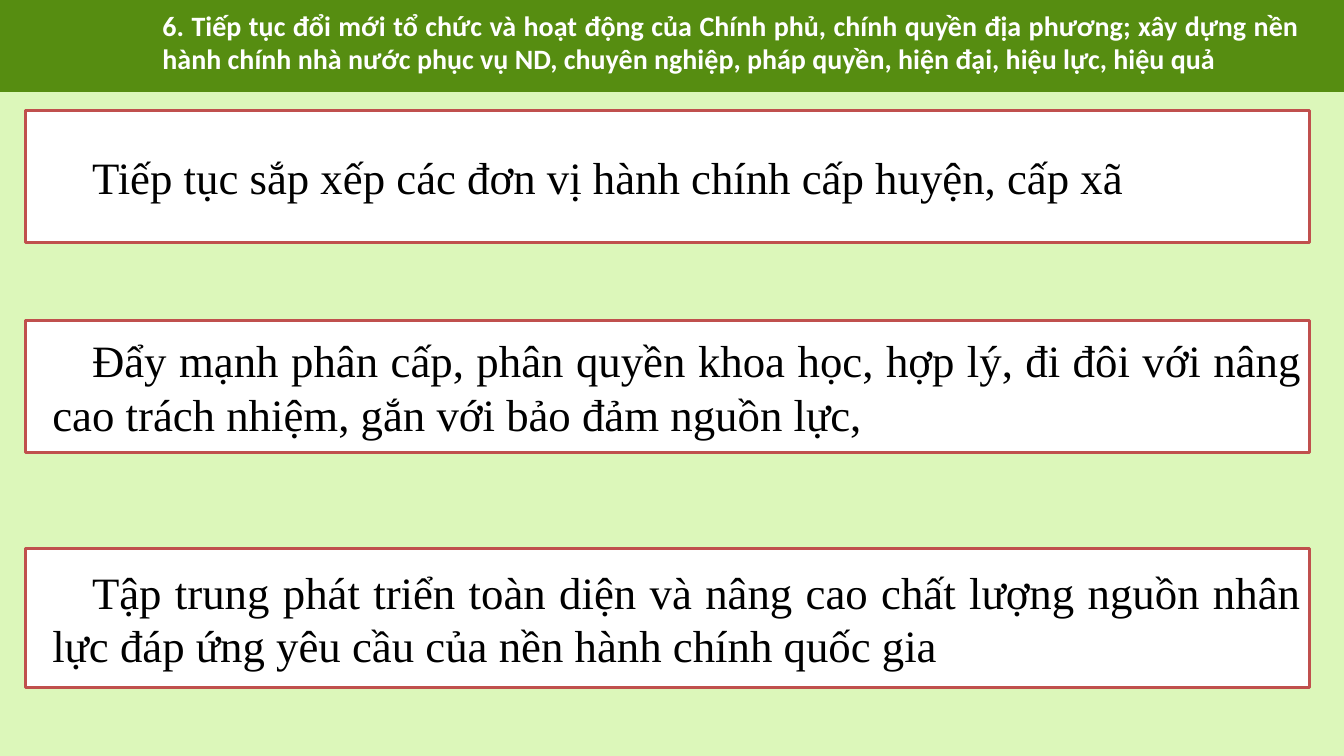
import dataclasses

import pptx
import pptx.dml.color
import pptx.enum.shapes
import pptx.enum.text
import pptx.util

Cm = pptx.util.Cm
Pt = pptx.util.Pt
Anchor = pptx.enum.text.MSO_ANCHOR
AutoSize = pptx.enum.text.MSO_AUTO_SIZE

GREEN, PALE_GREEN, WHITE, RED, BLACK = "568D11", "DCF7BA", "FFFFFF", "C0504D", "000000"
PAGE_WIDTH, PAGE_HEIGHT = 33.87, 19.05
HEADER_HEIGHT = 2.33
BOX_LEFT, BOX_WIDTH = 0.64, 32.36

TITLE = (
    "6. Tiếp tục đổi mới tổ chức và hoạt động của Chính phủ, chính quyền địa phương; "
    "xây dựng nền hành chính nhà nước phục vụ ND, chuyên nghiệp, pháp quyền, "
    "hiện đại, hiệu lực, hiệu quả"
)
TITLE_FONT = {"name": "Calibri", "size": Pt(20), "bold": True}
TASK_FONT = {"name": "Times New Roman", "size": Pt(32), "bold": False}
TITLE_FRAME = {
    "word_wrap": True,
    "auto_size": AutoSize.SHAPE_TO_FIT_TEXT,
    "vertical_anchor": Anchor.TOP,
}
TASK_FRAME = {
    "word_wrap": True,
    "vertical_anchor": Anchor.MIDDLE,
    "margin_left": Cm(0.18),
    "margin_right": Cm(0.18),
    "margin_top": Cm(0.1),
    "margin_bottom": Cm(0.1),
}


@dataclasses.dataclass
class Task:
    top: float
    height: float
    text: str


TASKS = [
    Task(2.79, 3.33, "Tiếp tục sắp xếp các đơn vị hành chính cấp huyện, cấp xã"),
    Task(8.08, 3.33, "Đẩy mạnh phân cấp, phân quyền khoa học, hợp lý, đi đôi với nâng "
                     "cao trách nhiệm, gắn với bảo đảm nguồn lực,"),
    Task(13.82, 3.51, "Tập trung phát triển toàn diện và nâng cao chất lượng nguồn nhân "
                      "lực đáp ứng yêu cầu của nền hành chính quốc gia"),
]


def paint(target, colour: str) -> None:
    """Give a fill a solid colour from its hex string."""
    target.solid()
    target.fore_color.rgb = pptx.dml.color.RGBColor.from_string(colour)


def apply_format(target, values: dict) -> None:
    for name, value in values.items():
        setattr(target, name, value)


def add_box(page, left: float, top: float, width: float, height: float,
            fill: str, line: str, line_width: float):
    box = page.shapes.add_shape(
        pptx.enum.shapes.MSO_SHAPE.RECTANGLE, Cm(left), Cm(top), Cm(width), Cm(height))
    box.shadow.inherit = False
    paint(box.fill, fill)
    paint(box.line.fill, line)
    box.line.width = Pt(line_width)
    return box


def write_text(box, text: str, frame_format: dict, font_format: dict,
               colour: str, margin: float, indent: float) -> None:
    """Write one justified paragraph with a left margin and first-line indent."""
    frame = box.text_frame
    apply_format(frame, frame_format)
    para = frame.paragraphs[0]
    para.alignment = pptx.enum.text.PP_ALIGN.JUSTIFY
    properties = para._p.get_or_add_pPr()
    properties.set("marL", str(Cm(margin)))
    properties.set("indent", str(Cm(indent)))
    span = para.add_run()
    span.text = text
    apply_format(span.font, font_format)
    paint(span.font.fill, colour)


def main() -> None:
    deck = pptx.Presentation()
    deck.slide_width, deck.slide_height = Cm(PAGE_WIDTH), Cm(PAGE_HEIGHT)
    page = deck.slides.add_slide(deck.slide_layouts.get_by_name("Title Only"))

    # Green header over a pale panel
    paint(page.background.fill, GREEN)
    add_box(page, 0, HEADER_HEIGHT, PAGE_WIDTH, PAGE_HEIGHT - HEADER_HEIGHT,
            PALE_GREEN, PALE_GREEN, 1.25)

    # Title
    title = page.shapes.title
    apply_format(title, {"left": Cm(3.71), "top": Cm(0.08),
                         "width": Cm(29.29), "height": Cm(1.96)})
    write_text(title, TITLE, TITLE_FRAME, TITLE_FONT, WHITE, 0.13, 0)

    # Task boxes
    for task in TASKS:
        box = add_box(page, BOX_LEFT, task.top, BOX_WIDTH, task.height, WHITE, RED, 2)
        write_text(box, task.text, TASK_FRAME, TASK_FONT, BLACK, 0.5, 1)

    deck.save("out.pptx")


if __name__ == "__main__":
    main()
